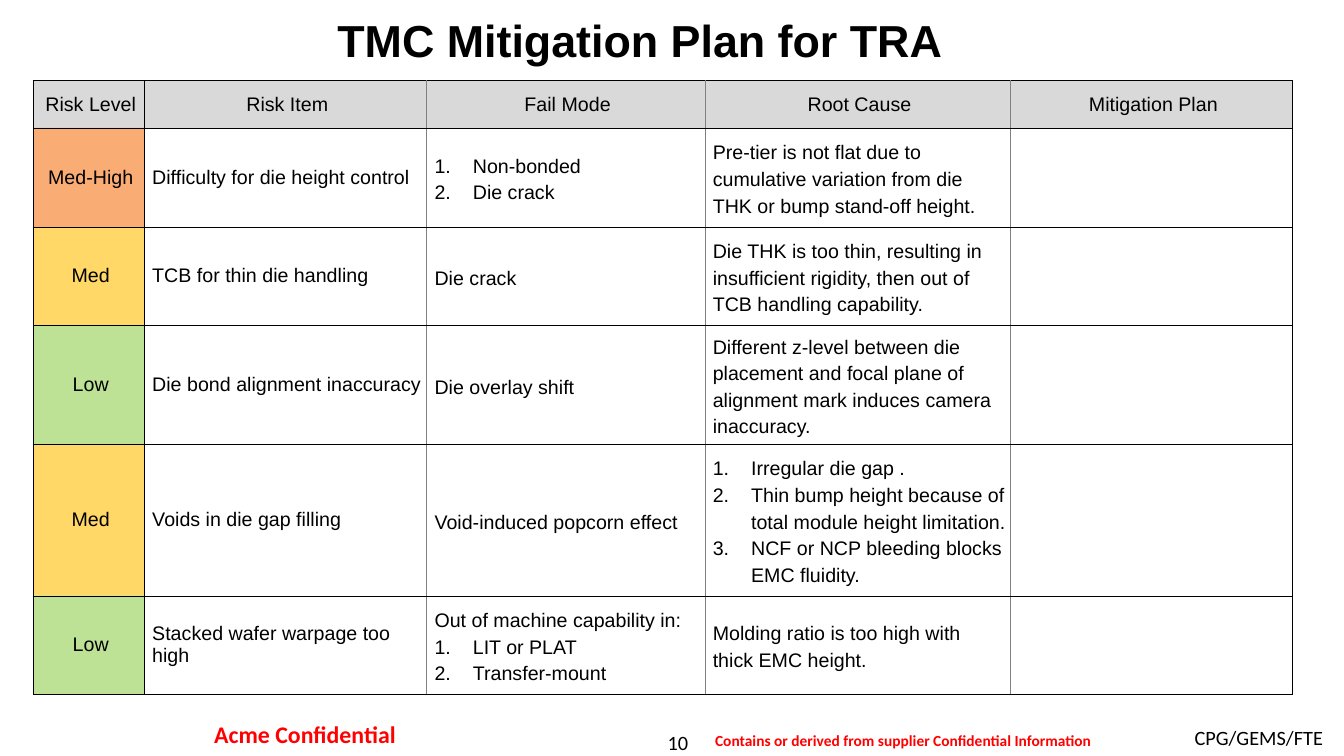
from lxml import etree
from pptx import Presentation
from pptx.dml.color import RGBColor
from pptx.enum.text import MSO_ANCHOR, MSO_AUTO_SIZE, PP_ALIGN
from pptx.oxml.ns import qn
from pptx.util import Inches, Pt

LEFT, CENTER, RIGHT = PP_ALIGN.LEFT, PP_ALIGN.CENTER, PP_ALIGN.RIGHT
MIDDLE = MSO_ANCHOR.MIDDLE
NO_AUTOFIT = MSO_AUTO_SIZE.NONE

BLACK, GREY, WHITE, RED = "000000", "808080", "FFFFFF", "FF0000"
HEADER_FILL = "D9D9D9"
RISK_FILLS = {"Med-High": "F77619", "Med": "FFBF03", "Low": "92D050"}
RISK_OPACITY = 60

COLUMN_WIDTHS = [1.1, 2.8, 2.76, 3.03, 2.8]
ROW_HEIGHTS = [0.47, 0.98, 0.98, 1.18, 1.5, 0.98]
HEADINGS = ["Risk Level", "Risk Item", "Fail Mode", "Root Cause", "Mitigation Plan"]
RISKS = [
    ("Med-High", "Difficulty for die height control",
     ("", ["Non-bonded", "Die crack"]),
     ("Pre-tier is not flat due to cumulative variation from die THK "
      "or bump stand-off height.", [])),
    ("Med", "TCB for thin die handling",
     ("Die crack", []),
     ("Die THK is too thin, resulting in insufficient rigidity, then out of "
      "TCB handling capability.", [])),
    ("Low", "Die bond alignment inaccuracy",
     ("Die overlay shift", []),
     ("Different z-level between die placement and focal plane of alignment "
      "mark induces camera inaccuracy.", [])),
    ("Med", "Voids in die gap filling",
     ("Void-induced popcorn effect", []),
     ("", ["Irregular die gap .",
           "Thin bump height because of total module height limitation.",
           "NCF or NCP bleeding blocks EMC fluidity."])),
    ("Low", "Stacked wafer warpage too high",
     ("Out of machine capability in:", ["LIT or PLAT", "Transfer-mount"]),
     ("Molding ratio is too high with thick EMC height.", [])),
]


def color(value):
    return RGBColor.from_string(value)


class RiskSlide:
    def __init__(self, presentation):
        self.slide = presentation.slides.add_slide(presentation.slide_layouts[5])

    def run(self, paragraph, text, size, font="Arial", ink=BLACK, bold=False):
        run = paragraph.add_run()
        run.text = text
        run.font.size = Pt(size)
        run.font.name = font
        run.font.bold = bold
        run.font.color.rgb = color(ink)

    def insets(self, frame, horizontal, vertical):
        frame.margin_left = frame.margin_right = Inches(horizontal)
        frame.margin_top = frame.margin_bottom = Inches(vertical)

    def title(self, text, left, top, width, height):
        title = self.slide.shapes.title
        title.left, title.top = Inches(left), Inches(top)
        title.width, title.height = Inches(width), Inches(height)
        frame = title.text_frame
        frame.auto_size = NO_AUTOFIT
        frame.vertical_anchor = MIDDLE
        self.insets(frame, 0, 0)
        paragraph = frame.paragraphs[0]
        paragraph.alignment = CENTER
        self.run(paragraph, text, 32, bold=True)

    def footer(self, text, box, size, inset, align=CENTER, ink=BLACK, bold=False):
        frame = self.slide.shapes.add_textbox(*map(Inches, box)).text_frame
        frame.word_wrap = True
        self.insets(frame, *inset)
        paragraph = frame.paragraphs[0]
        paragraph.alignment = align
        self.run(paragraph, text, size, "Calibri", ink, bold)

    def table(self, left, top, widths, heights):
        table = self.slide.shapes.add_table(
            len(heights), len(widths), Inches(left), Inches(top),
            Inches(sum(widths)), Inches(sum(heights))).table
        table.first_row = table.horz_banding = False
        for column, width in zip(table.columns, widths):
            column.width = Inches(width)
        for row, height in zip(table.rows, heights):
            row.height = Inches(height)
        return table

    def border(self, cell, side, ink, width):
        line = etree.SubElement(cell._tc.get_or_add_tcPr(), qn(f"a:ln{side}"),
                                w=str(int(Pt(width))))
        fill = etree.SubElement(line, qn("a:solidFill"))
        etree.SubElement(fill, qn("a:srgbClr"), val=ink)

    def cell(self, table, row, column, fill, opacity=100):
        cell = table.cell(row, column)
        cell.vertical_anchor = MIDDLE
        cell.margin_left = Inches(0.08)
        cell.margin_right = cell.margin_top = cell.margin_bottom = Inches(0.04)
        for side, edge in (("L", column), ("R", column + 1)):
            strong = edge in (0, 1, len(table.columns))
            self.border(cell, side, BLACK if strong else GREY, 0.75 if strong else 0.25)
        for side, edge in (("T", row), ("B", row + 1)):
            strong = edge in (0, 1, len(table.rows))
            self.border(cell, side, BLACK, 0.75 if strong else 0.25)
        cell.fill.solid()
        cell.fill.fore_color.rgb = color(fill)
        if opacity < 100:
            tint = cell._tc.tcPr.find(qn("a:solidFill")).find(qn("a:srgbClr"))
            etree.SubElement(tint, qn("a:alpha"), val=str(opacity * 1000))
        return cell

    def label(self, cell, text, align=LEFT):
        paragraph = cell.text_frame.paragraphs[0]
        paragraph.alignment = align
        self.run(paragraph, text, 14)

    def details(self, cell, intro, items):
        frame = cell.text_frame
        lines = [(intro, False)] if intro else []
        lines += [(item, True) for item in items]
        for index, (text, numbered) in enumerate(lines):
            paragraph = frame.add_paragraph() if index else frame.paragraphs[0]
            if numbered:
                properties = paragraph._p.get_or_add_pPr()
                indent = int(Inches(0.38))
                properties.set("marL", str(indent))
                properties.set("indent", str(-indent))
                etree.SubElement(properties, qn("a:buAutoNum"), type="arabicPeriod")
            paragraph.line_spacing = Pt(19)
            self.run(paragraph, text, 14)


def main():
    presentation = Presentation()
    presentation.slide_width = Inches(13.33)
    presentation.slide_height = Inches(7.5)
    page = RiskSlide(presentation)

    page.title("TMC Mitigation Plan for TRA", 0.33, 0.06, 12.04, 0.66)

    plan = page.table(0.33, 0.8, COLUMN_WIDTHS, ROW_HEIGHTS)
    for column, heading in enumerate(HEADINGS):
        page.label(page.cell(plan, 0, column, HEADER_FILL), heading, CENTER)
    for row, (level, item, fail_mode, root_cause) in enumerate(RISKS, 1):
        page.label(page.cell(plan, row, 0, RISK_FILLS[level], RISK_OPACITY), level, CENTER)
        page.label(page.cell(plan, row, 1, WHITE), item)
        page.details(page.cell(plan, row, 2, WHITE), *fail_mode)
        page.details(page.cell(plan, row, 3, WHITE), *root_cause)
        page.cell(plan, row, 4, WHITE)

    page.footer("10", (5.56, 7.24, 2.33, 0.24), 14.5, (0, 0))
    page.footer("CPG/GEMS/FTE", (8.83, 7.15, 4.39, 0.35), 14.5, (0.1, 0.05), RIGHT)
    page.footer("Acme Confidential", (1.55, 7.08, 2.95, 0.41), 17, (0.12, 0.06),
                ink=RED, bold=True)
    page.footer("Contains or derived from supplier Confidential Information",
                (6.92, 7.19, 4.08, 0.31), 11, (0.12, 0.06), ink=RED, bold=True)

    presentation.save("out.pptx")


if __name__ == "__main__":
    main()
